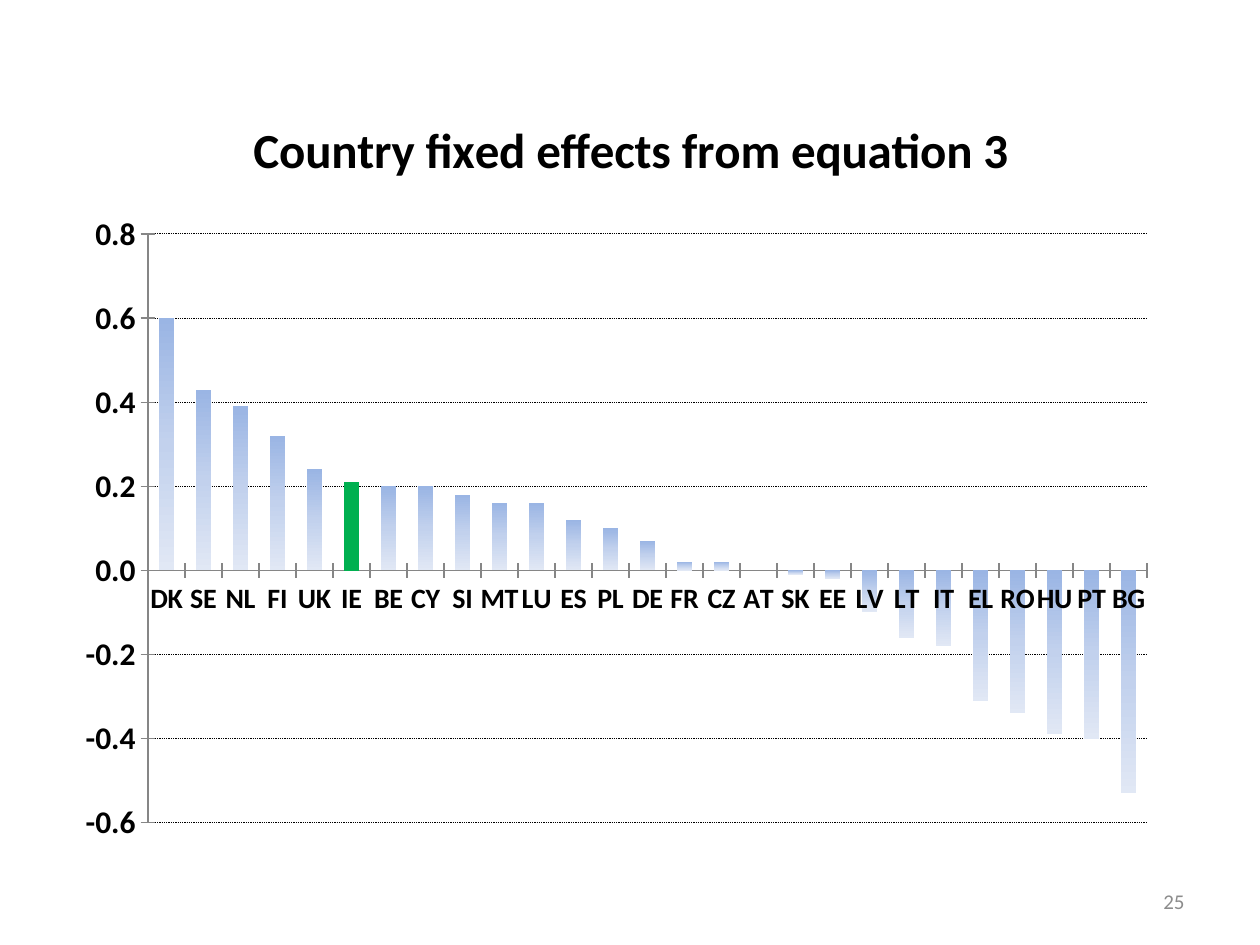
from lxml import etree
from pptx import Presentation
from pptx.chart.data import CategoryChartData
from pptx.dml.color import RGBColor
from pptx.enum.chart import XL_CHART_TYPE as ChartType, XL_TICK_MARK as TickMark
from pptx.enum.dml import MSO_LINE_DASH_STYLE as Dash
from pptx.enum.text import MSO_ANCHOR as Anchor, PP_ALIGN as Align
from pptx.oxml import parse_xml
from pptx.oxml.ns import nsdecls, qn
from pptx.util import Inches, Pt

EFFECTS = {
    "DK": 0.6, "SE": 0.43, "NL": 0.39, "FI": 0.32, "UK": 0.24, "IE": 0.21,
    "BE": 0.2, "CY": 0.2, "SI": 0.18, "MT": 0.16, "LU": 0.16, "ES": 0.12,
    "PL": 0.1, "DE": 0.07, "FR": 0.02, "CZ": 0.02, "AT": 0, "SK": -0.01,
    "EE": -0.02, "LV": -0.1, "LT": -0.16, "IT": -0.18, "EL": -0.31,
    "RO": -0.34, "HU": -0.39, "PT": -0.4, "BG": -0.53,
}
HIGHLIGHT = "IE"
BAR_GRADIENT = {0: "9AB5E4", 50: "C2D1ED", 100: "E1E8F5"}
PLOT_AREA = {"x": 0.074, "y": 0.195, "w": 0.882, "h": 0.776}


def color(hex_value):
    return RGBColor.from_string(hex_value)


class SlideBuilder:
    font_name = "Calibri"
    ink, axis_gray, number_gray = "000000", "868686", "8C8C8C"

    def __init__(self, presentation):
        self.width = presentation.slide_width
        self.height = presentation.slide_height
        self.slide = presentation.slides.add_slide(presentation.slide_layouts[6])

    def box(self, left, top, width, height):
        """Turn shares of the slide into lengths."""
        return (int(left * self.width), int(top * self.height),
                int(width * self.width), int(height * self.height))

    def style(self, font, size, hex_value, bold=False):
        font.name, font.size, font.bold = self.font_name, Pt(size), bold
        font.color.rgb = color(hex_value)

    def text(self, content, area, size, hex_value):
        frame = self.slide.shapes.add_textbox(*self.box(*area)).text_frame
        frame.word_wrap = True
        frame.vertical_anchor = Anchor.MIDDLE
        frame.text = content
        paragraph = frame.paragraphs[0]
        paragraph.alignment = Align.RIGHT
        self.style(paragraph.runs[0].font, size, hex_value)

    def column_chart(self, title, values, area):
        data = CategoryChartData()
        data.categories = list(values)
        data.add_series("Series 1", list(values.values()))
        chart = self.slide.shapes.add_chart(
            ChartType.COLUMN_CLUSTERED, *self.box(*area), data).chart
        chart.has_legend = False
        self.style(chart.font, 18, self.ink, bold=True)

        # Title
        chart.has_title = True
        chart.chart_title.include_in_layout = False
        frame = chart.chart_title.text_frame
        frame.text = title
        self.style(frame.paragraphs[0].runs[0].font, 28, self.ink, bold=True)

        # Columns, with one country picked out
        plot = chart.plots[0]
        plot.vary_by_categories = False
        plot.gap_width = 150
        series = plot.series[0]
        series.invert_if_negative = False
        self.gradient(series.format)
        point = series.points[list(values).index(HIGHLIGHT)].format
        point.fill.solid()
        point.fill.fore_color.rgb = color("00B050")
        point.line.color.rgb = color("00B050")

        self.axes(chart)
        self.plot_layout(chart)

    def gradient(self, chart_format):
        chart_format.fill.gradient()
        chart_format.fill.gradient_angle = 270
        stops = chart_format.fill.gradient_stops
        stop_list = stops[0]._gs.getparent()
        for stop in list(stop_list):
            stop_list.remove(stop)
        for percent, hex_value in BAR_GRADIENT.items():
            stop = etree.SubElement(stop_list, qn("a:gs"), pos=str(percent * 1000))
            etree.SubElement(stop, qn("a:srgbClr"), val=hex_value)

    def axes(self, chart):
        for axis, size in ((chart.category_axis, 16), (chart.value_axis, 18)):
            axis.major_tick_mark = TickMark.CROSS
            axis.minor_tick_mark = TickMark.NONE
            axis.format.line.color.rgb = color(self.axis_gray)
            axis.format.line.width = Pt(0.75)
            self.style(axis.tick_labels.font, size, self.ink, bold=True)
        value_axis = chart.value_axis
        value_axis.minimum_scale, value_axis.maximum_scale = -0.6, 0.8
        value_axis.major_unit = 0.2
        value_axis.tick_labels.number_format = "0.0"
        value_axis.tick_labels.number_format_is_linked = False
        value_axis.has_major_gridlines = True
        grid_line = value_axis.major_gridlines.format.line
        grid_line.color.rgb = color(self.ink)
        grid_line.width = Pt(0.5)
        grid_line.dash_style = Dash.ROUND_DOT

    def plot_layout(self, chart):
        plot_area = chart._chartSpace.find(".//" + qn("c:plotArea"))
        for layout in plot_area.findall(qn("c:layout")):
            plot_area.remove(layout)
        modes = "".join(f'<c:{side}Mode val="edge"/>' for side in "xy")
        shares = "".join(f'<c:{key} val="{share}"/>' for key, share in PLOT_AREA.items())
        plot_area.insert(0, parse_xml(
            f'<c:layout {nsdecls("c")}><c:manualLayout><c:layoutTarget val="inner"/>'
            f'{modes}{shares}</c:manualLayout></c:layout>'))


def main():
    presentation = Presentation()
    presentation.slide_width, presentation.slide_height = Inches(10), Inches(7.5)
    builder = SlideBuilder(presentation)

    # Chart of country effects
    builder.column_chart("Country fixed effects from equation 3", EFFECTS,
                         (0.051, 0.091, 0.899, 0.803))

    # Slide number
    builder.text("25", (0.717, 0.927, 0.233, 0.053), 12, builder.number_gray)

    presentation.save("out.pptx")


if __name__ == "__main__":
    main()
